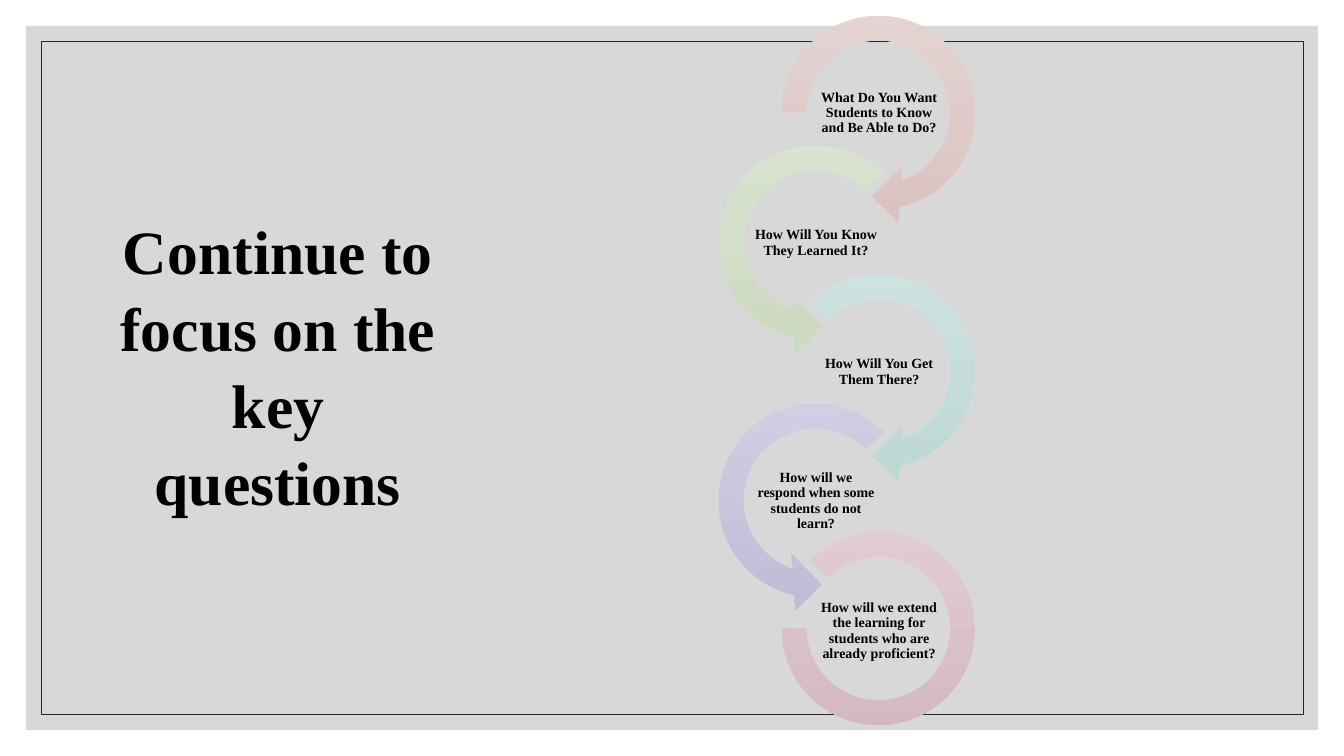
from lxml.etree import SubElement
from pptx import Presentation
from pptx.dml.color import RGBColor
from pptx.enum.shapes import MSO_SHAPE
from pptx.enum.text import MSO_ANCHOR, MSO_AUTO_SIZE, PP_ALIGN
from pptx.oxml.ns import qn
from pptx.util import Pt

TITLE = "Continue to focus on the key questions"
BLACK = RGBColor(0, 0, 0)
GRAY = RGBColor(0xBF, 0xBF, 0xBF)
DARK = RGBColor(0x26, 0x26, 0x26)

RIGHT = (MSO_SHAPE.CIRCULAR_ARROW, 766)
LEFT = (MSO_SHAPE.LEFT_CIRCULAR_ARROW, 703)
ARC = (MSO_SHAPE.BLOCK_ARC, 766)

# question, (preset, left px), (start angle, end angle), top colour, bottom colour
STEPS = [
    ("What Do You Want Students to Know and Be Able to Do?", RIGHT, (45, 108),
     RGBColor(0xE5, 0xD4, 0xD3), RGBColor(0xDA, 0xC2, 0xC0)),
    ("How Will You Know They Learned It?", LEFT, (63, 189),
     RGBColor(0xDA, 0xE4, 0xD1), RGBColor(0xCB, 0xD9, 0xBE)),
    ("How Will You Get Them There?", RIGHT, (45, 135),
     RGBColor(0xCF, 0xE3, 0xE1), RGBColor(0xBD, 0xD8, 0xD5)),
    ("How will we respond when some students do not learn?", LEFT, (63, 189),
     RGBColor(0xD3, 0xCE, 0xE2), RGBColor(0xC2, 0xBB, 0xD7)),
    ("How will we extend the learning for students who are already proficient?",
     ARC, (135, 108), RGBColor(0xE1, 0xCC, 0xD2), RGBColor(0xD5, 0xB9, 0xC1)),
]
PITCH = 129.5
RING, TRIM = 225, 16


def px(n):
    return round(n * 914400 / 100.8)


def add(kind, *box):
    shape = slide.shapes.add_shape(kind, *map(px, box))
    shape.shadow.inherit = False
    shape.line.fill.background()
    return shape


def write(shape, text, size, pad, space):
    frame = shape.text_frame
    look = {"word_wrap": True, "auto_size": MSO_AUTO_SIZE.NONE,
            "vertical_anchor": MSO_ANCHOR.MIDDLE}
    look.update({f"margin_{side}": px(pad)
                 for side in ("left", "top", "right", "bottom")})
    for key, value in look.items():
        setattr(frame, key, value)
    frame.text = text
    para = frame.paragraphs[0]
    para.alignment, para.line_spacing = PP_ALIGN.CENTER, space
    font = para.runs[0].font
    for key, value in {"name": "Times New Roman", "size": Pt(size), "bold": True}.items():
        setattr(font, key, value)
    font.color.rgb = BLACK


def add_ring(kind, left, top, ends, light, deep):
    if kind == MSO_SHAPE.BLOCK_ARC:
        side = RING - 2 * TRIM
        ring = add(kind, left + TRIM, top + TRIM - 2, side, side)
        values = (*ends, 0.127)
    else:
        ring = add(kind, left, top, RING, RING)
        values = (0.11, 11.42, *ends, 0.125)
    for i, value in enumerate(values):
        ring.adjustments[i] = value
    ring.fill.gradient()
    ring.fill.gradient_angle = 270
    for stop, color in zip(ring.fill.gradient_stops, (light, deep)):
        stop.color.rgb = color


prs = Presentation()
prs.slide_width, prs.slide_height = px(1344), px(756)
slide = prs.slides.add_slide(prs.slide_layouts[5])

panel = add(MSO_SHAPE.RECTANGLE, 26, 26, 1292, 704)
panel.fill.solid()
panel.fill.fore_color.rgb = GRAY
tint = panel.fill._xPr.find(".//" + qn("a:srgbClr"))
SubElement(tint, qn("a:alpha")).set("val", "60000")

border = add(MSO_SHAPE.RECTANGLE, 41, 41, 1262, 673)
border.fill.background()
border.line.color.rgb = DARK
border.line.width = Pt(0.5)

for i, (text, (kind, left), ends, light, deep) in enumerate(STEPS):
    top = round(i * PITCH)
    add_ring(kind, left, top, ends, light, deep)
    label = slide.shapes.add_textbox(*map(px, (left + 50, top + 82, 126, 62)))
    write(label, text, 10, 1, 0.9)

title = slide.shapes.title
title.left, title.top, title.width, title.height = map(px, (110, 210, 336, 308))
write(title, TITLE, 44, 6, 1.04)
slide.shapes._spTree.append(title._element)  # in front of the panel

prs.save("out.pptx")
